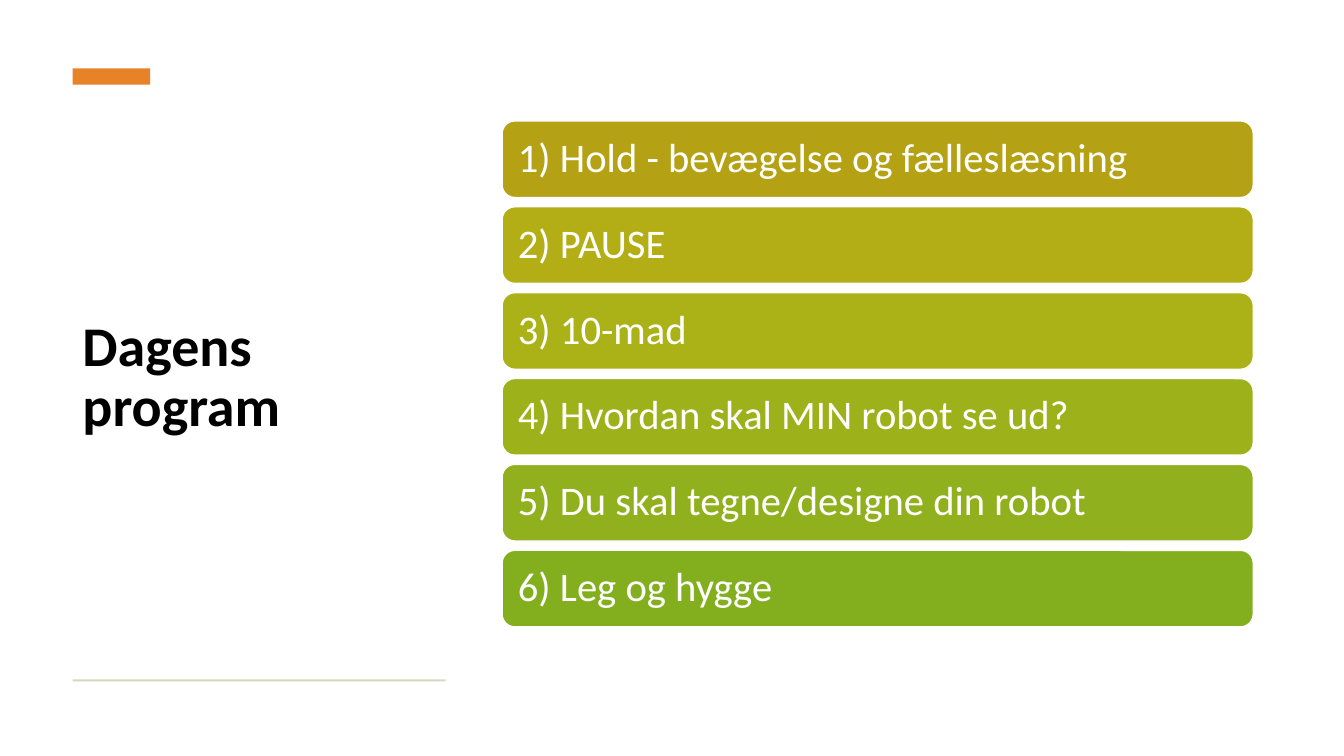
from pptx import Presentation
from pptx.dml.color import RGBColor
from pptx.enum.shapes import MSO_SHAPE
from pptx.enum.text import MSO_ANCHOR, PP_ALIGN
from pptx.util import Inches, Pt

RECTANGLE = MSO_SHAPE.RECTANGLE
ROUNDED = MSO_SHAPE.ROUNDED_RECTANGLE
MIDDLE = MSO_ANCHOR.MIDDLE
LEFT = PP_ALIGN.LEFT

TITLE = "Dagens program"
PROGRAM = [
    ("1) Hold - bevægelse og fælleslæsning", "B4A114"),
    ("2) PAUSE", "B3AE16"),
    ("3) 10-mad", "AAB218"),
    ("4) Hvordan skal MIN robot se ud?", "9DB11B"),
    ("5) Du skal tegne/designe din robot", "90B01D"),
    ("6) Leg og hygge", "83AF1F"),
]
WHITE, BLACK, ORANGE, SAND = "FFFFFF", "000000", "E78229", "D9D6BC"

SLIDE_WIDTH, SLIDE_HEIGHT = 13.33, 7.5
MARGIN, TITLE_WIDTH = 0.72, 3.7
LIST_LEFT, LIST_WIDTH = 4.98, 7.45
LIST_TOP, LIST_BOTTOM, ROW_HEIGHT = 1.2, 6.22, 0.76
ROW_STEP = (LIST_BOTTOM - LIST_TOP - ROW_HEIGHT) / (len(PROGRAM) - 1)


def color(value):
    return RGBColor.from_string(value)


def add_block(slide, kind, left, top, width, height, fill, line=None):
    shape = slide.shapes.add_shape(
        kind, Inches(left), Inches(top), Inches(width), Inches(height))
    shape.shadow.inherit = False
    shape.fill.solid()
    shape.fill.fore_color.rgb = color(fill)
    if line:
        shape.line.color.rgb = color(line)
        shape.line.width = Pt(1)
    else:
        shape.line.fill.background()
    return shape


def write(shape, text, size, ink, bold=False, inset=(0.1, 0.05)):
    frame = shape.text_frame
    frame.word_wrap = True
    frame.vertical_anchor = MIDDLE
    frame.margin_left = frame.margin_right = Inches(inset[0])
    frame.margin_top = frame.margin_bottom = Inches(inset[1])
    paragraph = frame.paragraphs[0]
    paragraph.alignment = LEFT
    paragraph.line_spacing = 0.9
    run = paragraph.add_run()
    run.text = text
    run.font.name = "Calibri"
    run.font.size = Pt(size)
    run.font.bold = bold
    run.font.color.rgb = color(ink)


def main():
    presentation = Presentation()
    presentation.slide_width = Inches(SLIDE_WIDTH)
    presentation.slide_height = Inches(SLIDE_HEIGHT)
    slide = presentation.slides.add_slide(presentation.slide_layouts[6])
    slide.background.fill.solid()
    slide.background.fill.fore_color.rgb = color(WHITE)

    title = slide.shapes.add_textbox(
        Inches(MARGIN), Inches(1.05), Inches(TITLE_WIDTH), Inches(5.41))
    write(title, TITLE, 40, BLACK, bold=True)

    add_block(slide, RECTANGLE, MARGIN, 0.68, 0.77, 0.16, ORANGE)
    add_block(slide, RECTANGLE, MARGIN, 6.74, TITLE_WIDTH, 0.02, SAND)

    for row, (text, fill) in enumerate(PROGRAM):
        bar = add_block(slide, ROUNDED, LIST_LEFT, LIST_TOP + row * ROW_STEP,
                        LIST_WIDTH, ROW_HEIGHT, fill, line=WHITE)
        write(bar, text, 29, WHITE, inset=(0.12, 0.12))

    presentation.save("out.pptx")


if __name__ == "__main__":
    main()
